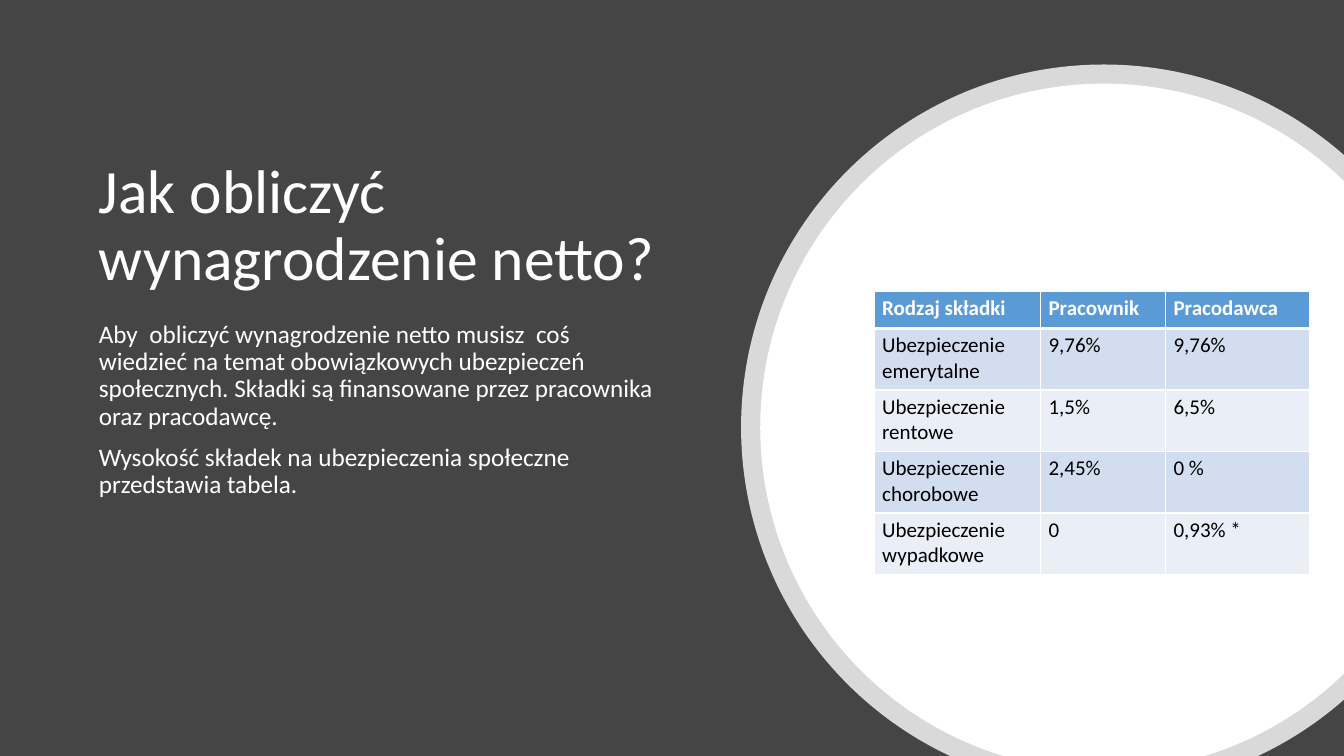
"""Build the slide on net pay with its table of insurance contributions."""
from math import acos, asin, cos, pi, sin, tan

from lxml.etree import SubElement
from pptx import Presentation
from pptx.dml.color import RGBColor
from pptx.enum.text import MSO_ANCHOR, MSO_AUTO_SIZE, PP_ALIGN
from pptx.oxml.ns import qn
from pptx.util import Inches, Pt

TITLE = "Jak obliczyć wynagrodzenie netto?"
BODY = [
    "Aby  obliczyć wynagrodzenie netto musisz  coś wiedzieć na temat obowiązkowych "
    "ubezpieczeń społecznych. Składki są finansowane przez pracownika oraz pracodawcę.",
    "Wysokość składek na ubezpieczenia społeczne przedstawia tabela.",
]
CONTRIBUTIONS = [
    ("Rodzaj składki", "Pracownik", "Pracodawca"),
    ("Ubezpieczenie emerytalne", "9,76%", "9,76%"),
    ("Ubezpieczenie rentowe", "1,5%", "6,5%"),
    ("Ubezpieczenie chorobowe", "2,45%", "0 %"),
    ("Ubezpieczenie wypadkowe", "0", "0,93% *"),
]
COLUMN_WIDTHS = (1.65, 1.24, 1.43)
HEADER_HEIGHT, ROW_HEIGHT = 0.37, 0.61

FONT = "Calibri"
WHITE = RGBColor(0xFF, 0xFF, 0xFF)
BLACK = RGBColor(0x00, 0x00, 0x00)
GREY = RGBColor(0x45, 0x45, 0x45)
BLUE = RGBColor(0x5B, 0x9B, 0xD5)
BANDS = (RGBColor(0xEA, 0xEF, 0xF7), RGBColor(0xD2, 0xDE, 0xEF))

SLIDE_WIDTH, SLIDE_HEIGHT = 13.33, 7.5
CENTER_X, CENTER_Y = 10.95, 4.24
RING_RADIUS, DISC_RADIUS = 3.6, 3.41


def set_font(paragraph, size, color, bold=False):
    font = paragraph.font
    font.name, font.size, font.bold = FONT, Pt(size), bold
    font.color.rgb = color


def fill_placeholder(shape, texts, box, size, anchor, space_before):
    shape.left, shape.top, shape.width, shape.height = map(Inches, box)
    frame = shape.text_frame
    frame.text = "\n".join(texts)
    frame.word_wrap = True
    frame.auto_size = MSO_AUTO_SIZE.NONE
    frame.vertical_anchor = anchor
    for paragraph in frame.paragraphs:
        set_font(paragraph, size, WHITE)
        paragraph.alignment = PP_ALIGN.LEFT
        paragraph.line_spacing = 0.9
        paragraph.space_before = Pt(space_before)
        paragraph.space_after = Pt(0)
        properties = paragraph._p.get_or_add_pPr()
        properties.set("marL", "0")
        properties.set("indent", "0")
        SubElement(properties, qn("a:buNone"))


def circle_point(radius, angle, tangent=0):
    x = CENTER_X + radius * (cos(angle) - tangent * sin(angle))
    y = CENTER_Y + radius * (sin(angle) + tangent * cos(angle))
    return Inches(x), Inches(y)


def bend_segment(segment, shape, radius, start, end):
    reach = 4 / 3 * tan((end - start) / 4)
    controls = (circle_point(radius, start, reach), circle_point(radius, end, -reach))
    segment.tag = qn("a:cubicBezTo")
    for position, (x, y) in enumerate(controls):
        point = SubElement(segment, qn("a:pt"), x=str(x - shape.left), y=str(y - shape.top))
        segment.insert(position, point)


def add_clipped_circle(slide, radius, opacity):
    right = acos((SLIDE_WIDTH - CENTER_X) / radius)
    bottom = asin((SLIDE_HEIGHT - CENTER_Y) / radius)
    angles = (-right, -pi / 2, -pi, -pi - bottom, bottom, right)
    points = [circle_point(radius, angle) for angle in angles]
    builder = slide.shapes.build_freeform(*points[0])
    builder.add_line_segments(points[1:], close=True)
    shape = builder.convert_to_shape()
    segments = list(shape._element.spPr.iter(qn("a:lnTo")))
    for index in (0, 1, 2, 4):
        bend_segment(segments[index], shape, radius, angles[index], angles[index + 1])
    shape.shadow.inherit = False
    shape.line.fill.background()
    shape.fill.solid()
    shape.fill.fore_color.rgb = WHITE
    if opacity < 100:
        color = shape._element.spPr.find(qn("a:solidFill"))[0]
        SubElement(color, qn("a:alpha"), val=str(opacity * 1000))


def add_borders(cell, bottom_width):
    properties = cell._tc.get_or_add_tcPr()
    for side, width in (("L", 1), ("R", 1), ("T", 1), ("B", bottom_width)):
        line = SubElement(properties, qn(f"a:ln{side}"), w=str(Pt(width)))
        fill = SubElement(line, qn("a:solidFill"))
        SubElement(fill, qn("a:srgbClr"), val=str(WHITE))


def add_contributions(slide):
    row_heights = [HEADER_HEIGHT] + [ROW_HEIGHT] * (len(CONTRIBUTIONS) - 1)
    box = (8.67, 2.89, sum(COLUMN_WIDTHS), sum(row_heights))
    table = slide.shapes.add_table(
        len(row_heights), len(COLUMN_WIDTHS), *map(Inches, box)
    ).table
    table.horz_banding = False
    for column, width in zip(table.columns, COLUMN_WIDTHS):
        column.width = Inches(width)
    for index, (row, height) in enumerate(zip(table.rows, row_heights)):
        row.height = Inches(height)
        header = index == 0
        for cell, text in zip(row.cells, CONTRIBUTIONS[index]):
            cell.text = text
            cell.margin_left = cell.margin_right = Inches(0.08)
            cell.margin_top = cell.margin_bottom = Inches(0.04)
            set_font(cell.text_frame.paragraphs[0], 15, WHITE if header else BLACK, header)
            add_borders(cell, 3 if header else 1)
            cell.fill.solid()
            cell.fill.fore_color.rgb = BLUE if header else BANDS[index % 2]


def main():
    presentation = Presentation()
    presentation.slide_width = Inches(SLIDE_WIDTH)
    presentation.slide_height = Inches(SLIDE_HEIGHT)
    slide = presentation.slides.add_slide(presentation.slide_layouts[1])
    slide.background.fill.solid()
    slide.background.fill.fore_color.rgb = GREY
    title, body = slide.placeholders
    fill_placeholder(title, [TITLE], (0.88, 1.53, 5.77, 1.45), 44, MSO_ANCHOR.MIDDLE, 0)
    fill_placeholder(body, BODY, (0.88, 3.14, 5.77, 3.48), 18, MSO_ANCHOR.TOP, 10)
    add_clipped_circle(slide, RING_RADIUS, 80)
    add_clipped_circle(slide, DISC_RADIUS, 100)
    add_contributions(slide)
    presentation.save("out.pptx")


if __name__ == "__main__":
    main()
